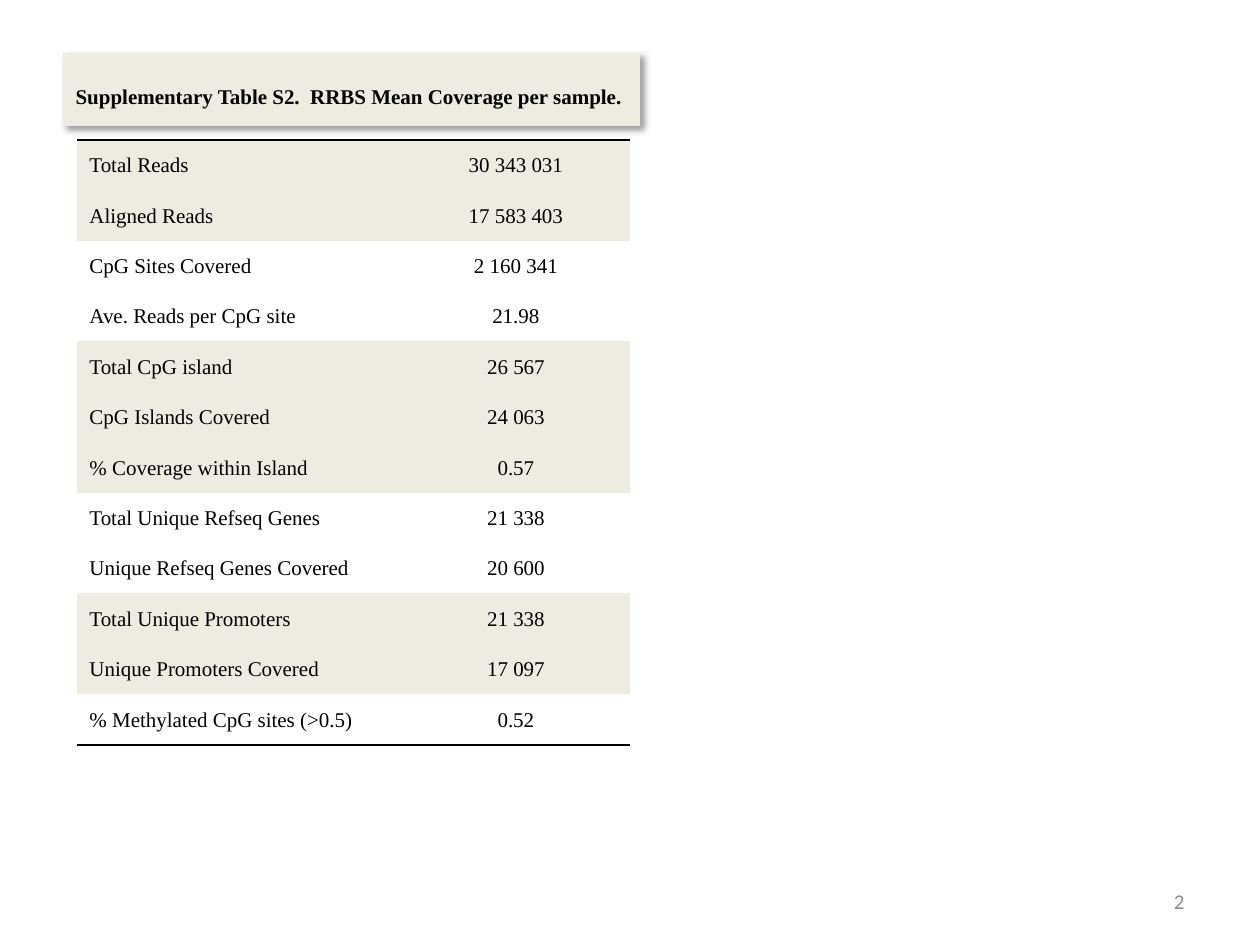
from dataclasses import dataclass

from lxml import etree
from pptx import Presentation
from pptx import util as u
from pptx.dml.color import RGBColor
from pptx.enum import text
from pptx.oxml import parse_xml
from pptx.oxml.ns import nsdecls, qn


@dataclass(frozen=True)
class Theme:
    band: RGBColor = RGBColor(0xEE, 0xEC, 0xE1)
    ink: RGBColor = RGBColor(0, 0, 0)
    muted: RGBColor = RGBColor(0x8C, 0x8C, 0x8C)
    serif: str = "Times New Roman"
    sans: str = "Calibri"
    size: u.Pt = u.Pt(12)
    rule: u.Pt = u.Pt(1.5)


@dataclass(frozen=True)
class Group:
    """Consecutive table rows that share a background."""
    shaded: bool
    rows: tuple[tuple[str, str], ...]


THEME = Theme()
PLAIN_TABLE_STYLE = "{2D5ABB26-0587-4C30-8999-92F81FD0307C}"
ROW_HEIGHT = u.Inches(0.4)
COLUMN_WIDTHS = (u.Inches(2.58), u.Inches(1.81))
GROUPS = (
    Group(True, (("Total Reads", "30 343 031"),
                 ("Aligned Reads", "17 583 403"))),
    Group(False, (("CpG Sites Covered", "2 160 341"),
                  ("Ave. Reads per CpG site", "21.98"))),
    Group(True, (("Total CpG island", "26 567"),
                 ("CpG Islands Covered", "24 063"),
                 ("% Coverage within Island", "0.57"))),
    Group(False, (("Total Unique Refseq Genes", "21 338"),
                  ("Unique Refseq Genes Covered", "20 600"))),
    Group(True, (("Total Unique Promoters", "21 338"),
                 ("Unique Promoters Covered", "17 097"))),
    Group(False, (("% Methylated CpG sites (>0.5)", "0.52"),)),
)


def apply(target, formats: dict) -> None:
    for name, value in formats.items():
        setattr(target, name, value)


def write(frame, words: str, align, font: str, color: RGBColor, bold=False):
    """Put one formatted paragraph into a text frame."""
    para = frame.paragraphs[0]
    para.alignment = align
    span = para.add_run()
    span.text = words
    apply(span.font, {"name": font, "size": THEME.size, "bold": bold})
    span.font.color.rgb = color
    return para


def place(box, left: float, top: float, width: float, height: float) -> None:
    sides = {"left": left, "top": top, "width": width, "height": height}
    apply(box, {name: u.Inches(value) for name, value in sides.items()})


def add_rule(cell, side: str) -> None:
    """Draw a cell border; side is T or B."""
    line = parse_xml(
        f'<a:ln{side} {nsdecls("a")} w="{int(THEME.rule)}"><a:solidFill>'
        f'<a:srgbClr val="{THEME.ink}"/></a:solidFill></a:ln{side}>')
    cell._tc.get_or_add_tcPr().insert(0, line)


def add_shadow(box) -> None:
    box._element.spPr.append(parse_xml(
        f'<a:effectLst {nsdecls("a")}>'
        f'<a:outerShdw blurRad="{u.Pt(4)}" dist="{u.Pt(3)}" dir="2700000" '
        'algn="tl" rotWithShape="0"><a:srgbClr val="000000">'
        '<a:alpha val="40000"/></a:srgbClr></a:outerShdw></a:effectLst>'))


def format_title(box) -> None:
    place(box, 0.5, 0.42, 4.58, 0.58)
    box.fill.solid()
    box.fill.fore_color.rgb = THEME.band
    box.line.fill.background()
    add_shadow(box)
    apply(box.text_frame, {"word_wrap": True,
                           "auto_size": text.MSO_AUTO_SIZE.NONE,
                           "vertical_anchor": text.MSO_ANCHOR.MIDDLE})
    para = write(box.text_frame,
                 "Supplementary Table S2.  RRBS Mean Coverage per sample.",
                 text.PP_ALIGN.LEFT, THEME.serif, THEME.ink, bold=True)
    para.line_spacing = 1.5
    # Hanging indent
    props = para._p.get_or_add_pPr()
    props.set("marL", str(u.Inches(1.88)))
    props.set("indent", str(-u.Inches(1.88)))


def fill_cell(cell, words: str, align, left: float, shaded: bool) -> None:
    apply(cell, {"margin_left": u.Inches(left), "margin_right": u.Inches(0.01),
                 "margin_top": u.Inches(0.01), "margin_bottom": 0,
                 "vertical_anchor": text.MSO_ANCHOR.MIDDLE})
    if shaded:
        cell.fill.solid()
        cell.fill.fore_color.rgb = THEME.band
    else:
        cell.fill.background()
    write(cell.text_frame, words, align, THEME.serif, THEME.ink)


def add_coverage_table(page) -> None:
    rows = [(group.shaded, row) for group in GROUPS for row in group.rows]
    holder = page.shapes.add_table(
        len(rows), len(COLUMN_WIDTHS), u.Inches(0.61), u.Inches(1.11),
        sum(COLUMN_WIDTHS), ROW_HEIGHT * len(rows))
    table = holder.table
    apply(table, {"first_row": False, "horz_banding": False})
    style: etree._Element = next(holder._element.iter(qn("a:tableStyleId")))
    style.text = PLAIN_TABLE_STYLE
    for column, width in zip(table.columns, COLUMN_WIDTHS):
        column.width = width
    for index, (shaded, (label, value)) in enumerate(rows):
        table.rows[index].height = ROW_HEIGHT
        fill_cell(table.cell(index, 0), label, text.PP_ALIGN.LEFT, 0.1, shaded)
        fill_cell(table.cell(index, 1), value, text.PP_ALIGN.CENTER, 0.01, shaded)
    # Rules above the first row and below the last
    for index, side in ((0, "T"), (len(rows) - 1, "B")):
        for cell in table.rows[index].cells:
            add_rule(cell, side)


def add_page_number(page) -> None:
    box = page.shapes.add_textbox(0, 0, 0, 0)
    place(box, 7.17, 6.95, 2.33, 0.4)
    apply(box.text_frame, {"word_wrap": True,
                           "vertical_anchor": text.MSO_ANCHOR.MIDDLE})
    write(box.text_frame, "2", text.PP_ALIGN.RIGHT, THEME.sans, THEME.muted)


def main() -> None:
    deck = Presentation()
    apply(deck, {"slide_width": u.Inches(10), "slide_height": u.Inches(7.5)})
    page = deck.slides.add_slide(deck.slide_layouts.get_by_name("Title Only"))
    format_title(page.shapes.title)
    add_coverage_table(page)
    add_page_number(page)
    deck.save("out.pptx")


if __name__ == "__main__":
    main()
